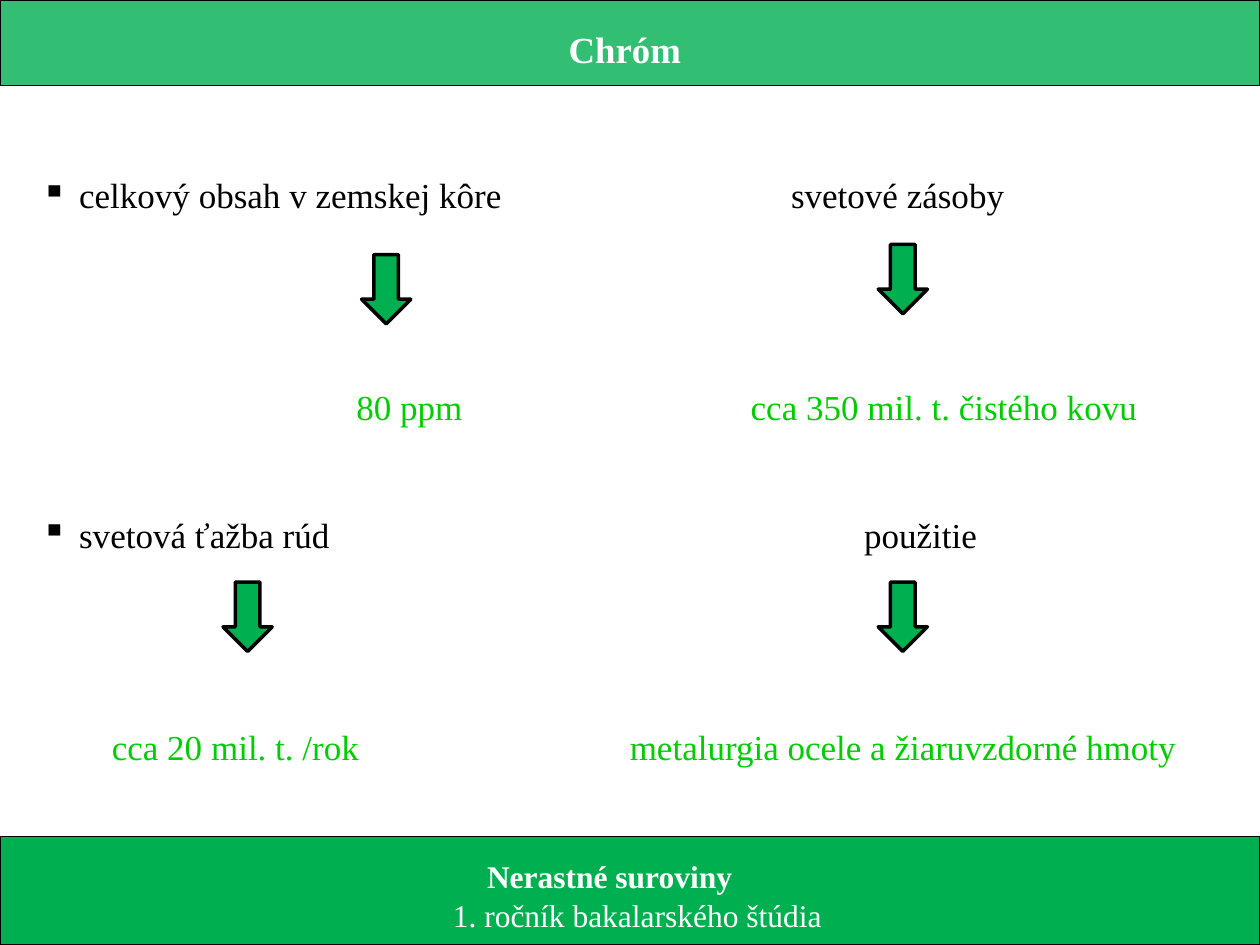
from lxml import etree
from pptx import Presentation
from pptx.dml.color import RGBColor
from pptx.enum.shapes import MSO_SHAPE
from pptx.enum.text import MSO_ANCHOR, PP_ALIGN
from pptx.oxml.ns import qn
from pptx.util import Inches, Pt

TOP = MSO_ANCHOR.TOP
CENTER, LEFT = PP_ALIGN.CENTER, PP_ALIGN.LEFT
GREEN = RGBColor(0x00, 0xB0, 0x50)
VALUE_GREEN = RGBColor(0x00, 0xCC, 0x00)
BLACK = RGBColor(0x00, 0x00, 0x00)
WHITE = RGBColor(0xFF, 0xFF, 0xFF)


def add_green_shape(kind, left, top, width, height, line_width):
    shape = slide.shapes.add_shape(
        kind, Inches(left), Inches(top), Inches(width), Inches(height))
    shape.shadow.inherit = False
    shape.fill.solid()
    shape.fill.fore_color.rgb = GREEN
    shape.line.color.rgb = BLACK
    shape.line.width = Pt(line_width)
    return shape


def write_line(paragraph, text, align, indent=0, **font_format):
    """Fill a paragraph; indent is its left margin in inches."""
    paragraph.alignment = align
    paragraph._p.get_or_add_pPr().set("marL", str(Inches(indent)))
    run = paragraph.add_run()
    run.text = text
    run.font.color.rgb = font_format.pop("color")
    for attribute, value in {"name": "Times New Roman", **font_format}.items():
        setattr(run.font, attribute, value)


prs = Presentation()
prs.slide_width, prs.slide_height = Inches(10), Inches(7.5)
slide = prs.slides.add_slide(prs.slide_layouts[6])
slide.background.fill.solid()
slide.background.fill.fore_color.rgb = WHITE

# Title bar
header = add_green_shape(MSO_SHAPE.RECTANGLE, 0, 0, 10, 0.68, 0.75)
header_color = header.fill._xPr.find(qn("a:solidFill"))[0]
etree.SubElement(header_color, qn("a:alpha"), val="80000")
title = header.text_frame
title.vertical_anchor = TOP
title.margin_top, title.margin_right = Inches(0.21), Inches(0.18)
write_line(title.paragraphs[0], "Chróm", CENTER,
           size=Pt(21), bold=True, color=WHITE)

# Footer bar
footer = add_green_shape(MSO_SHAPE.RECTANGLE, 0, 6.64, 10, 0.86, 0.75)
course = footer.text_frame
course.vertical_anchor = TOP
course.margin_top, course.margin_right = Inches(0.16), Inches(0.42)
write_line(course.paragraphs[0], "Nerastné suroviny", CENTER,
           size=Pt(18), bold=True, color=WHITE)
course.paragraphs[0].space_after = Pt(1)
write_line(course.add_paragraph(), "1. ročník bakalarského štúdia", CENTER, 0.44,
           size=Pt(18), bold=False, color=WHITE)

# Fact columns: left, width, bulleted, then (heading, indent, value, indent)
COLUMNS = [
    (0.23, 4.6, True, [
        ("celkový obsah v zemskej kôre", 0.3, "80 ppm", 2.5),
        ("svetová ťažba rúd", 0.3, "cca 20 mil. t. /rok", 0.56)]),
    (4.9, 4.74, False, [
        ("svetové zásoby", 1.28, "cca 350 mil. t. čistého kovu", 0.96),
        ("použitie", 1.86, "metalurgia ocele a žiaruvzdorné hmoty", 0)]),
]
for left, width, bulleted, facts in COLUMNS:
    column = slide.shapes.add_textbox(
        Inches(left), Inches(0.94), Inches(width), Inches(5.86)).text_frame
    column.word_wrap = True
    column.margin_top = Inches(0.44)
    for number, (heading, heading_indent, value, value_indent) in enumerate(facts):
        if number == 0:
            heading_line = column.paragraphs[0]
        else:
            heading_line = column.add_paragraph()
            heading_line.space_before = Pt(49)
        write_line(heading_line, heading, LEFT, heading_indent,
                   size=Pt(20), color=BLACK)
        if bulleted:
            properties = heading_line._p.get_or_add_pPr()
            properties.set("indent", str(-Inches(heading_indent)))
            etree.SubElement(properties, qn("a:buChar"), char="▪")
        value_line = column.add_paragraph()
        value_line.space_before = Pt(97)
        write_line(value_line, value, LEFT, value_indent,
                   size=Pt(20), color=VALUE_GREEN)

# Arrows from each heading to its value
for left, top in [(2.87, 2.02), (6.97, 1.94), (1.77, 4.62), (6.97, 4.62)]:
    add_green_shape(MSO_SHAPE.DOWN_ARROW, left, top, 0.39, 0.55, 2)

prs.save("out.pptx")
